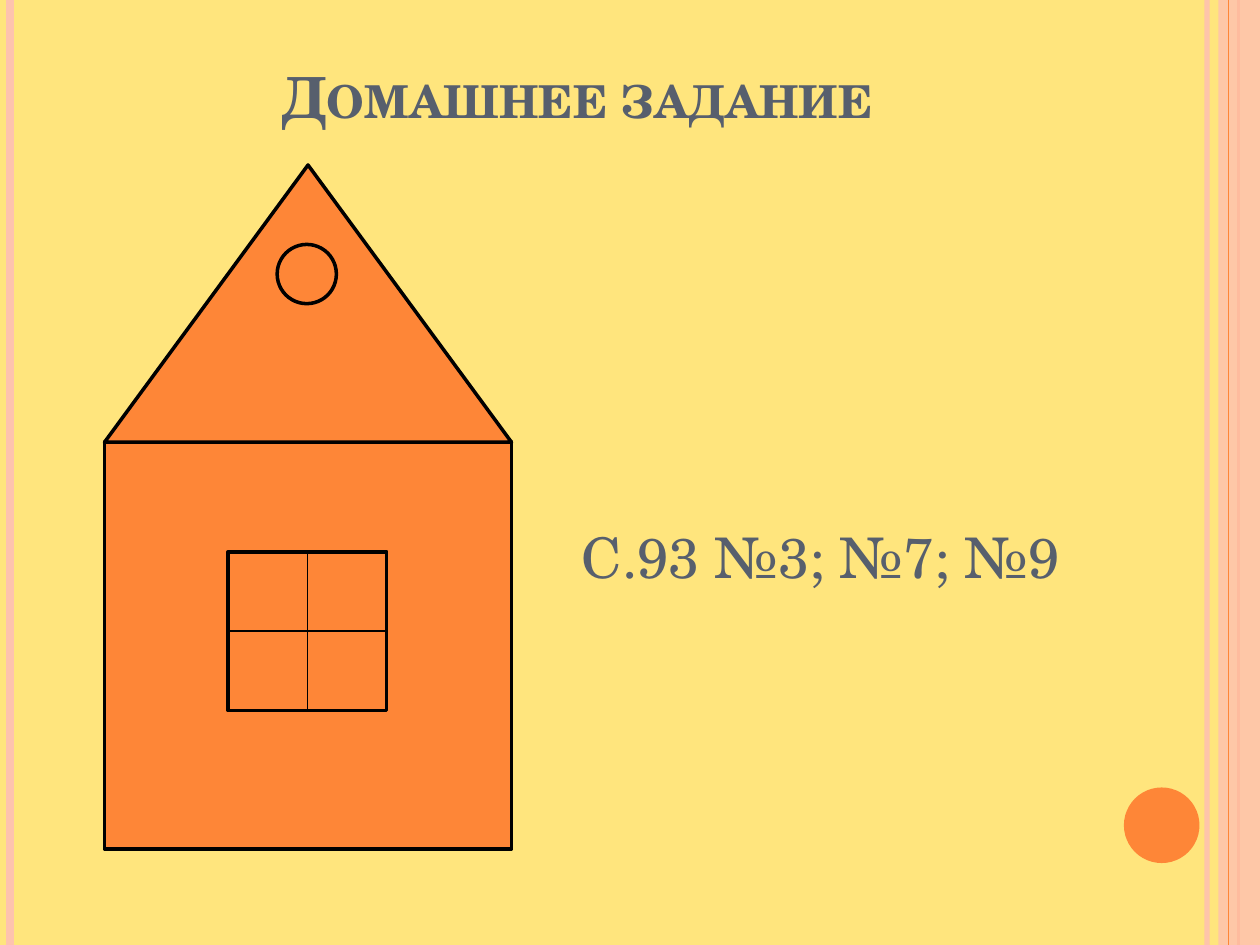
"""Build a homework slide with a house made of simple geometric shapes."""
from dataclasses import dataclass

from lxml import etree
from pptx import Presentation
from pptx.dml.color import RGBColor
from pptx.enum.shapes import MSO_CONNECTOR, MSO_SHAPE
from pptx.enum.text import MSO_ANCHOR, PP_ALIGN
from pptx.oxml.ns import qn
from pptx.util import Inches, Pt

RECTANGLE = MSO_SHAPE.RECTANGLE
TRIANGLE = MSO_SHAPE.ISOSCELES_TRIANGLE
OVAL = MSO_SHAPE.OVAL
STRAIGHT = MSO_CONNECTOR.STRAIGHT
TOP, LEFT, BOTTOM, RIGHT = range(4)

FONT = "TeX Gyre Schola"
BACKGROUND = "FFE57D"
ORANGE = "FE8637"
PINK = "FEC3AE"
BLACK = "000000"
SLATE = "575F6D"
SLIDE_WIDTH, SLIDE_HEIGHT = 10, 7.5


@dataclass(frozen=True)
class Figure:
    kind: int
    left: float
    top: float
    width: float
    height: float
    fill: str = ORANGE
    outline: str | None = BLACK
    opacity: int = 100


@dataclass(frozen=True)
class Stripe:
    x: float
    color: str
    weight: float
    opacity: int = 100


LEFT_STRIPES = [Stripe(9.58, PINK, 3, 93), Stripe(0.08, PINK, 4.5), Stripe(9.83, ORANGE, 1.5)]
RIGHT_BAND = Figure(RECTANGLE, 9.67, 0, 0.33, SLIDE_HEIGHT, PINK, None, 87)
BAND_STRIPE = Stripe(9.75, ORANGE, 0.75)
CORNER_DOT = Figure(OVAL, 8.92, 6.25, 0.6, 0.6, ORANGE, None)
WALL = Figure(RECTANGLE, 0.83, 3.51, 3.23, 3.23)
ROOF = Figure(TRIANGLE, 0.83, 1.31, 3.23, 2.2)
WINDOW = Figure(RECTANGLE, 1.81, 4.38, 1.26, 1.26)
ATTIC_WINDOW = Figure(OVAL, 2.2, 1.94, 0.47, 0.47)


def rgb(color: str) -> RGBColor:
    return RGBColor.from_string(color)


def set_opacity(shape, percent: int) -> None:
    if percent < 100:
        for color in shape._element.spPr.iter(qn("a:srgbClr")):
            etree.SubElement(color, qn("a:alpha")).set("val", str(percent * 1000))


def draw_figure(slide, figure: Figure):
    shape = slide.shapes.add_shape(
        figure.kind, Inches(figure.left), Inches(figure.top),
        Inches(figure.width), Inches(figure.height))
    shape.shadow.inherit = False
    shape.fill.solid()
    shape.fill.fore_color.rgb = rgb(figure.fill)
    if figure.outline:
        shape.line.color.rgb = rgb(figure.outline)
        shape.line.width = Pt(2)
    else:
        shape.line.fill.background()
    set_opacity(shape, figure.opacity)
    return shape


def draw_line(slide, x: float, color: str, weight: float):
    line = slide.shapes.add_connector(
        STRAIGHT, Inches(x), Inches(0), Inches(x), Inches(SLIDE_HEIGHT))
    line.line.color.rgb = rgb(color)
    line.line.width = Pt(weight)
    etree.SubElement(line._element.spPr, qn("a:effectLst"))
    return line


def draw_stripe(slide, stripe: Stripe) -> None:
    line = draw_line(slide, stripe.x, stripe.color, stripe.weight)
    set_opacity(line, stripe.opacity)


def draw_window_bar(slide, window, start: int, end: int) -> None:
    bar = draw_line(slide, WINDOW.left, BLACK, 1)
    bar.begin_connect(window, start)
    bar.end_connect(window, end)


def add_small_caps(paragraph, text: str, size: float, bold: bool = False) -> None:
    run = paragraph.add_run()
    run.text = text
    run.font.name = FONT
    run.font.size = Pt(size)
    run.font.bold = bold
    run.font.color.rgb = rgb(SLATE)
    run.font._element.set("cap", "small")


def add_title(slide) -> None:
    title = slide.shapes.title
    title.left, title.top = Inches(0.5), Inches(0.44)
    title.width, title.height = Inches(8.17), Inches(1.5)
    frame = title.text_frame
    frame.vertical_anchor = MSO_ANCHOR.TOP
    frame.word_wrap = True
    paragraph = frame.paragraphs[0]
    paragraph.alignment = PP_ALIGN.CENTER
    add_small_caps(paragraph, "Домашнее задание", 32.4, True)


def add_assignment(slide) -> None:
    box = slide.shapes.add_textbox(Inches(4.52), Inches(3.99), Inches(4.84), Inches(0.77))
    box.text_frame.word_wrap = False
    add_small_caps(box.text_frame.paragraphs[0], "с.93 №3; №7; №9", 40)


def main() -> None:
    presentation = Presentation()
    presentation.slide_width = Inches(SLIDE_WIDTH)
    presentation.slide_height = Inches(SLIDE_HEIGHT)
    slide = presentation.slides.add_slide(presentation.slide_layouts.get_by_name("Title Only"))
    slide.background.fill.solid()
    slide.background.fill.fore_color.rgb = rgb(BACKGROUND)

    for stripe in LEFT_STRIPES:
        draw_stripe(slide, stripe)
    draw_figure(slide, RIGHT_BAND)
    draw_stripe(slide, BAND_STRIPE)
    draw_figure(slide, CORNER_DOT)
    add_title(slide)

    draw_figure(slide, WALL)
    draw_figure(slide, ROOF)
    window = draw_figure(slide, WINDOW)
    draw_window_bar(slide, window, LEFT, RIGHT)
    draw_window_bar(slide, window, TOP, BOTTOM)
    add_assignment(slide)
    draw_figure(slide, ATTIC_WINDOW)
    presentation.save("out.pptx")


if __name__ == "__main__":
    main()
